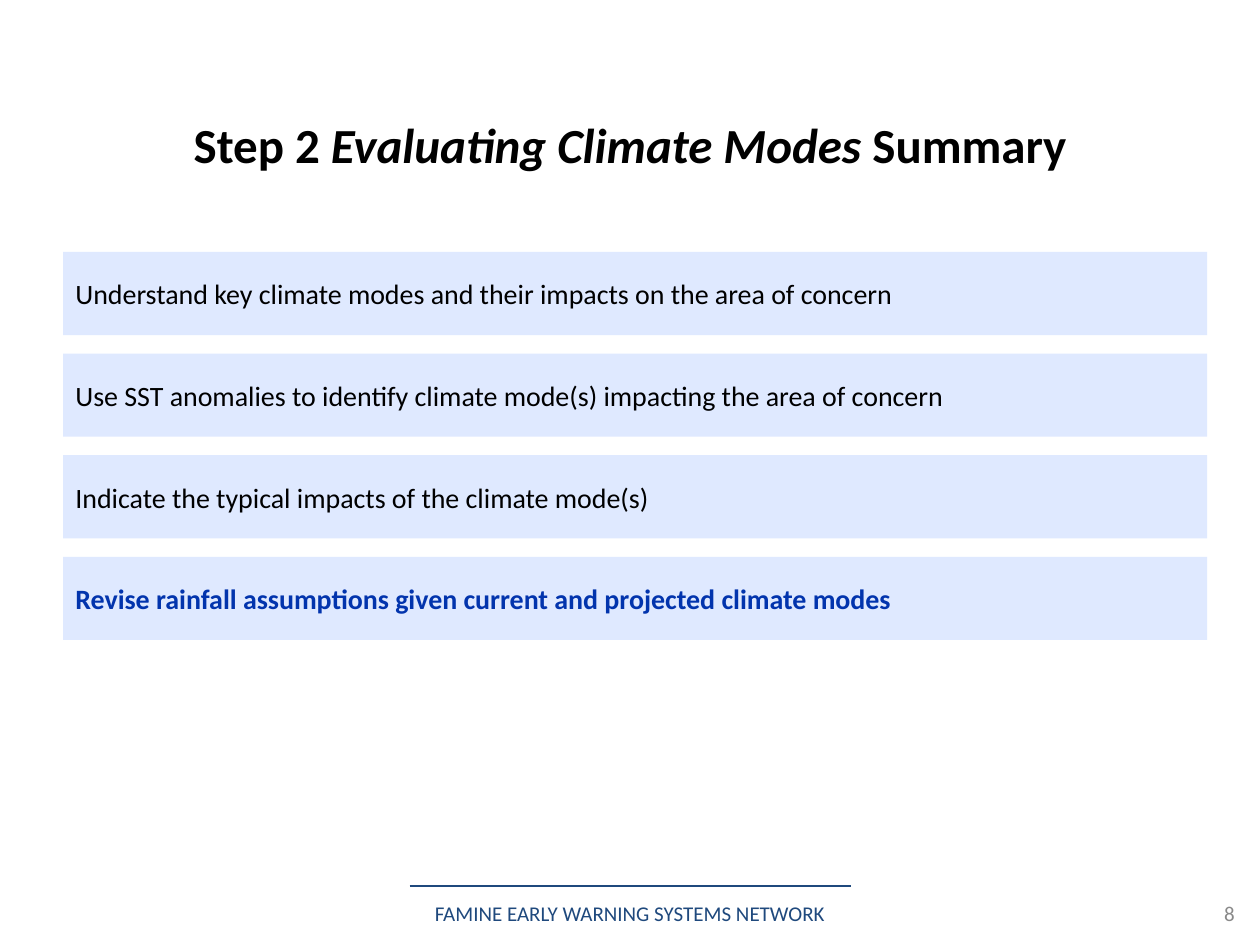
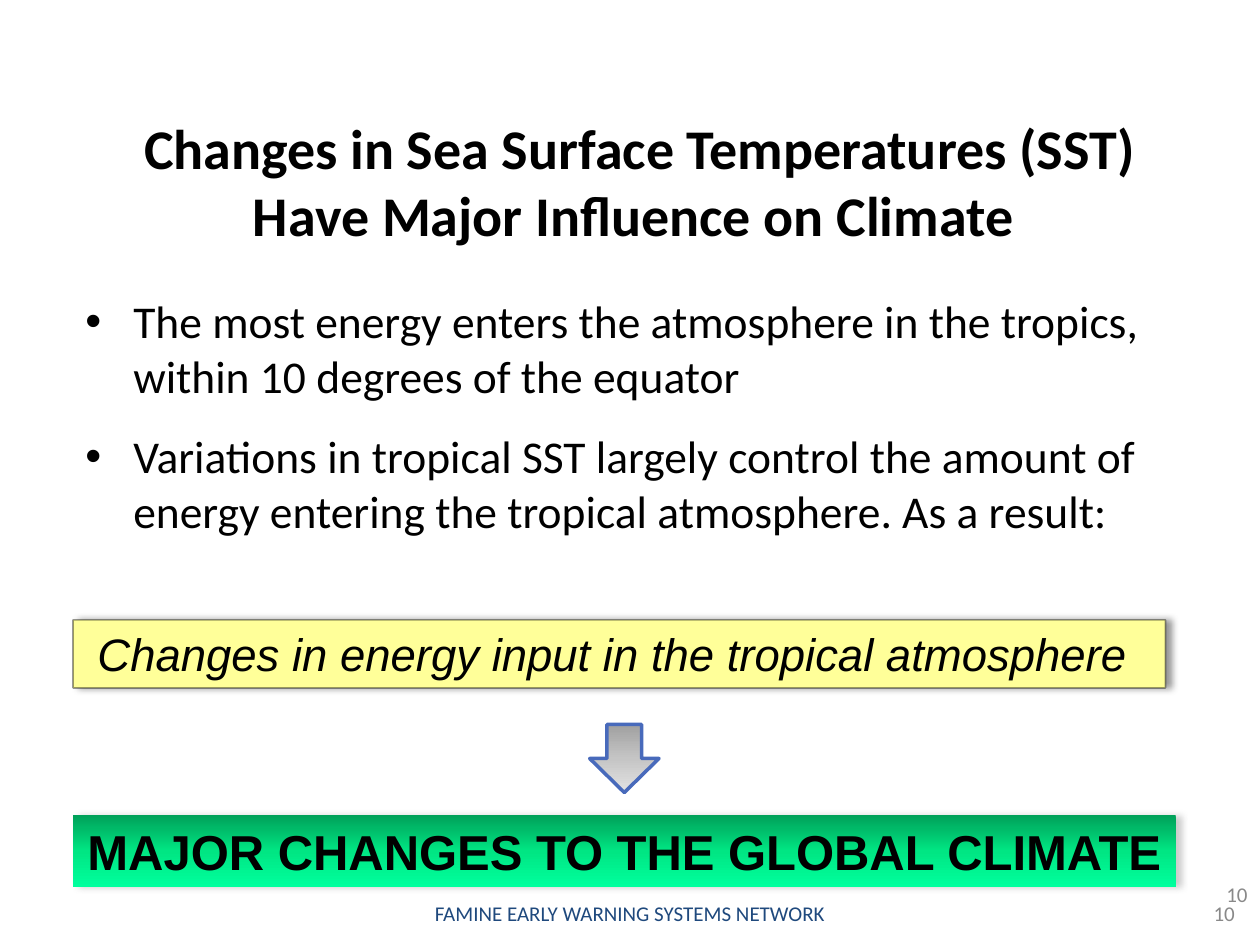
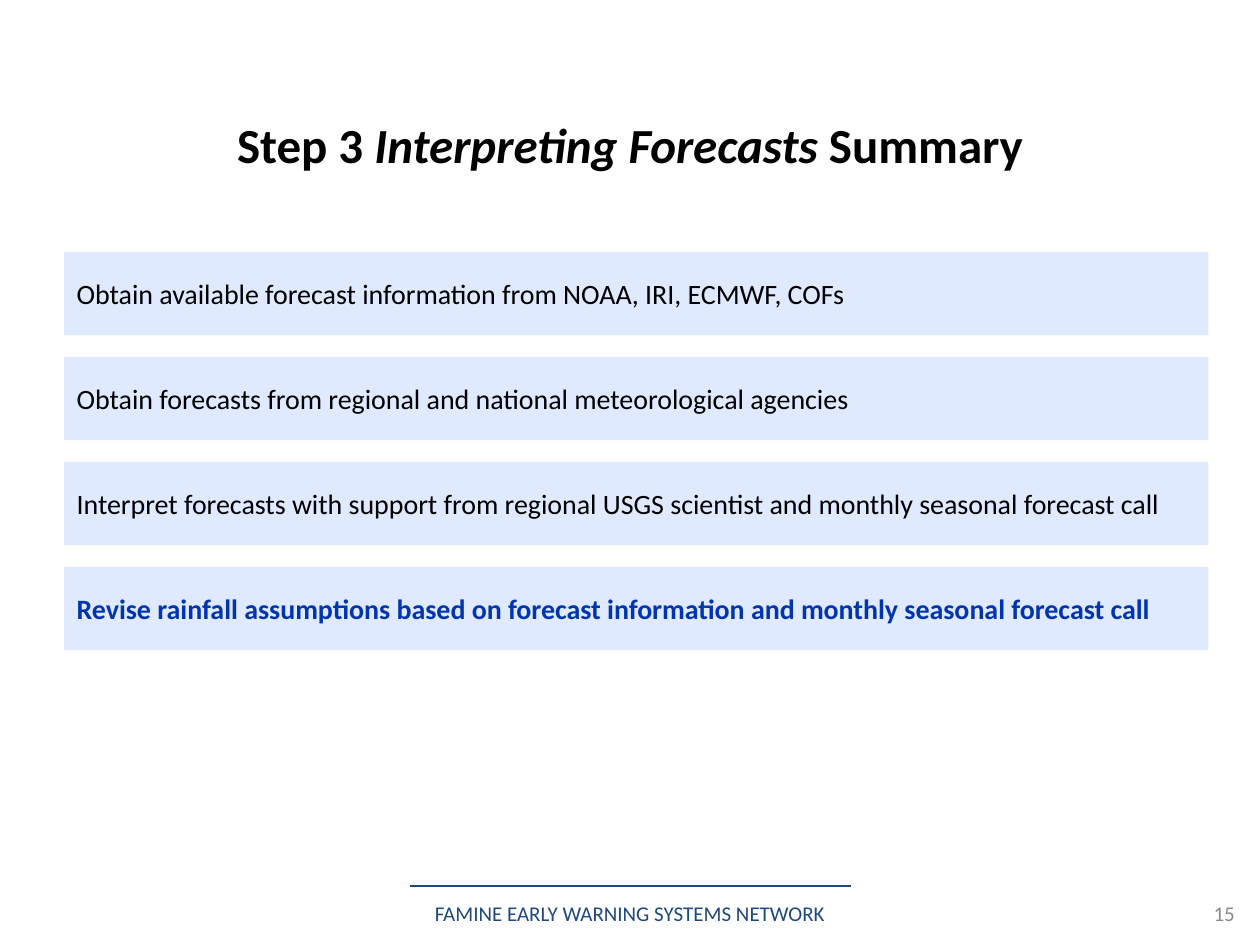
from dataclasses import dataclass
from typing import NamedTuple, Optional

from pptx import Presentation
from pptx import util as u
from pptx.dml.color import RGBColor
from pptx.enum import shapes, text
from pptx.oxml import parse_xml
from pptx.oxml.ns import nsdecls, qn

# Slide size and grid: 100 columns by 75 rows
SLIDE_WIDTH, SLIDE_HEIGHT = u.Inches(10), u.Inches(7.5)
COLUMN, ROW = SLIDE_WIDTH / 100, SLIDE_HEIGHT / 75

# Colours
BLACK = RGBColor(0x00, 0x00, 0x00)
NAVY = RGBColor(0x1F, 0x49, 0x7D)
GREY = RGBColor(0x89, 0x89, 0x89)
PALE_BLUE = RGBColor(0xDF, 0xE9, 0xFF)
STRONG_BLUE = RGBColor(0x02, 0x34, 0xAD)
ARROW_BLUE = RGBColor(0x48, 0x6A, 0xBB)
YELLOW = RGBColor(0xFF, 0xFF, 0x99)
SHADOW_GREY = RGBColor(0x80, 0x80, 0x80)
GREYS = [RGBColor(0xA0, 0xA0, 0xA0), RGBColor(0xC5, 0xC5, 0xC5), RGBColor(0xE3, 0xE3, 0xE3)]
GREENS = [RGBColor(0x00, 0xA0, 0x59), RGBColor(0x00, 0xE6, 0x83), RGBColor(0x00, 0xFF, 0x9D)]

BODY_FONT, BANNER_FONT = "Calibri", "Arial"
LEFT, CENTER, RIGHT = text.PP_ALIGN.LEFT, text.PP_ALIGN.CENTER, text.PP_ALIGN.RIGHT
TOP, MIDDLE = text.MSO_ANCHOR.TOP, text.MSO_ANCHOR.MIDDLE
RECTANGLE = shapes.MSO_SHAPE.RECTANGLE


class Area(NamedTuple):
    """Left and width in columns, top and height in rows."""
    left: float
    top: float
    width: float
    height: float

    def lengths(self) -> list[int]:
        units = (COLUMN, ROW, COLUMN, ROW)
        return [round(size * unit) for size, unit in zip(self, units)]


class Span(NamedTuple):
    words: str
    italic: bool = False


@dataclass
class Summary:
    """A slide with a title over a stack of equally spaced cards."""
    number: int
    title: list[Span]
    left: float
    last_top: float
    steps: list[str]


SUMMARY_TITLE = Area(5, 8.8, 90, 5.3)
CARD_TOP, CARD_WIDTH, CARD_HEIGHT = 20, 90.8, 6.6
FOOTER = Area(30, 71, 40, 3)
PAGE_NUMBER = Area(78, 71, 20, 3)

STEP_2 = Summary(
    8, [Span("Step 2 "), Span("Evaluating Climate Modes ", True), Span("Summary")], 5, 44.2,
    ["Understand key climate modes and their impacts on the area of concern",
     "Use SST anomalies to identify climate mode(s) impacting the area of concern",
     "Indicate the typical impacts of the climate mode(s)",
     "Revise rainfall assumptions given current and projected climate modes"])
STEP_3 = Summary(
    15, [Span("Step 3 "), Span("Interpreting Forecasts ", True), Span("Summary")], 5.1, 45,
    ["Obtain available forecast information from NOAA, IRI, ECMWF, COFs",
     "Obtain forecasts from regional and national meteorological agencies",
     "Interpret forecasts with support from regional USGS scientist and monthly seasonal forecast call",
     "Revise rainfall assumptions based on forecast information and monthly seasonal forecast call"])
SST_POINTS = [
    "The most energy enters the atmosphere in the tropics, within 10 degrees of the equator",
    "Variations in tropical SST largely control the amount of energy entering the tropical "
    "atmosphere. As a result:"]


# Drawing helpers
def write(box, paragraphs: list[list[Span]], *, size: float, font: str = BODY_FONT,
          color: RGBColor = BLACK, bold: bool = False, align=LEFT, anchor=MIDDLE,
          wrap: bool = True, inset: bool = True, bullet: bool = False, gap: float = 0) -> None:
    frame = box.text_frame
    frame.word_wrap = wrap
    frame.vertical_anchor = anchor
    if not inset:
        frame.margin_left = frame.margin_right = frame.margin_top = frame.margin_bottom = 0
    for index, spans in enumerate(paragraphs):
        para = frame.add_paragraph() if index else frame.paragraphs[0]
        para.alignment = align
        if index:
            para.space_before = u.Pt(gap)
        if bullet:
            properties = para._p.get_or_add_pPr()
            indent = u.Inches(0.38)
            properties.set("marL", str(indent))
            properties.set("indent", str(-indent))
            properties.append(parse_xml(f'<a:buFont {nsdecls("a")} typeface="Arial"/>'))
            properties.append(parse_xml(f'<a:buChar {nsdecls("a")} char="•"/>'))
        for span in spans:
            run = para.add_run()
            run.text = span.words
            run.font.name, run.font.size = font, u.Pt(size)
            run.font.bold, run.font.italic = bold, span.italic
            run.font.color.rgb = color


def add_text(page, area: Area, paragraphs: list[list[Span]], **style) -> None:
    write(page.shapes.add_textbox(*area.lengths()), paragraphs, **style)


def add_box(page, area: Area, fill: RGBColor | list[RGBColor], *, kind=RECTANGLE,
            line: Optional[RGBColor] = None, weight: float = 1,
            shadow: Optional[RGBColor] = None):
    box = page.shapes.add_shape(kind, *area.lengths())
    box.shadow.inherit = False
    properties = box._element.spPr
    if isinstance(fill, list):
        box.fill.gradient()
        box.fill.gradient_angle = 270
        stops = properties.find(qn("a:gradFill")).find(qn("a:gsLst"))
        for stop in list(stops):
            stops.remove(stop)
        for index, color in enumerate(fill):
            position = 100000 * index // (len(fill) - 1)
            stops.append(parse_xml(f'<a:gs {nsdecls("a")} pos="{position}">'
                                   f'<a:srgbClr val="{color}"/></a:gs>'))
    else:
        box.fill.solid()
        box.fill.fore_color.rgb = fill
    if line is None:
        box.line.fill.background()
    else:
        box.line.color.rgb = line
        box.line.width = u.Pt(weight)
    if shadow is not None:
        properties.find(qn("a:effectLst")).append(parse_xml(
            f'<a:outerShdw {nsdecls("a")} blurRad="{u.Pt(4)}" dist="{u.Pt(3)}" dir="0">'
            f'<a:srgbClr val="{shadow}"><a:alpha val="40000"/></a:srgbClr></a:outerShdw>'))
    return box


def fade_line(box, percent: int) -> None:
    color = box._element.spPr.find(qn("a:ln")).find(f'.//{qn("a:srgbClr")}')
    color.append(parse_xml(f'<a:alpha {nsdecls("a")} val="{percent * 1000}"/>'))


def add_page(deck, number: int):
    """Add a blank slide with the shared footer."""
    page = deck.slides.add_slide(deck.slide_layouts[6])
    left, top, right = round(32.5 * COLUMN), round(70.35 * ROW), round(67.5 * COLUMN)
    rule = page.shapes.add_connector(shapes.MSO_CONNECTOR.STRAIGHT, left, top, right, top)
    rule.line.color.rgb = NAVY
    rule.line.width = u.Pt(1.25)
    rule._element.spPr.append(parse_xml(f'<a:effectLst {nsdecls("a")}/>'))
    add_text(page, FOOTER, [[Span("FAMINE EARLY WARNING SYSTEMS NETWORK")]], size=12,
             color=NAVY, align=CENTER, wrap=False, inset=False)
    add_text(page, PAGE_NUMBER, [[Span(str(number))]], size=12, color=GREY,
             align=RIGHT, inset=False)
    return page


# Slides
def add_summary(deck, summary: Summary) -> None:
    page = add_page(deck, summary.number)
    add_text(page, SUMMARY_TITLE, [summary.title], size=28, bold=True, align=CENTER)
    last = len(summary.steps) - 1
    pitch = (summary.last_top - CARD_TOP) / last
    for index, step in enumerate(summary.steps):
        area = Area(summary.left, CARD_TOP + index * pitch, CARD_WIDTH, CARD_HEIGHT)
        card = add_box(page, area, PALE_BLUE)
        write(card, [[Span(step)]], size=16, bold=index == last,
              color=STRONG_BLUE if index == last else BLACK)


def add_sst_influence(deck, number: int) -> None:
    page = add_page(deck, number)
    title = "Changes in Sea Surface Temperatures (SST) Have Major Influence on Climate "
    add_text(page, Area(5.8, 11.7, 90, 5.3), [[Span(title)]], size=32, bold=True, align=CENTER)
    add_text(page, Area(76.7, 69.5, 23.3, 4), [[Span(str(number))]], size=12, color=GREY,
             align=RIGHT, anchor=TOP)
    add_text(page, Area(5.8, 22.8, 90, 24.9), [[Span(point)] for point in SST_POINTS],
             size=26, anchor=TOP, bullet=True, gap=14.6)

    # Cause, arrow, effect
    add_box(page, Area(46.8, 57.5, 5.5, 5.4), GREYS, kind=shapes.MSO_SHAPE.DOWN_ARROW,
            line=ARROW_BLUE, weight=2)
    cause = add_box(page, Area(5.8, 49.2, 86.7, 5.4), YELLOW, line=BLACK, shadow=BLACK)
    fade_line(cause, 40)
    write(cause, [[Span("Changes in energy input in the tropical atmosphere ", True)]],
          size=26, font=BANNER_FONT, align=CENTER, anchor=TOP)
    effect = add_box(page, Area(5.8, 64.7, 87.5, 5.7), GREENS, shadow=SHADOW_GREY)
    write(effect, [[Span("MAJOR CHANGES TO THE GLOBAL CLIMATE")]], size=28, bold=True,
          font=BANNER_FONT, align=CENTER, anchor=TOP, wrap=False)


def main() -> None:
    deck = Presentation()
    deck.slide_width, deck.slide_height = SLIDE_WIDTH, SLIDE_HEIGHT
    add_summary(deck, STEP_2)
    add_sst_influence(deck, 10)
    add_summary(deck, STEP_3)
    deck.save("out.pptx")


if __name__ == "__main__":
    main()
